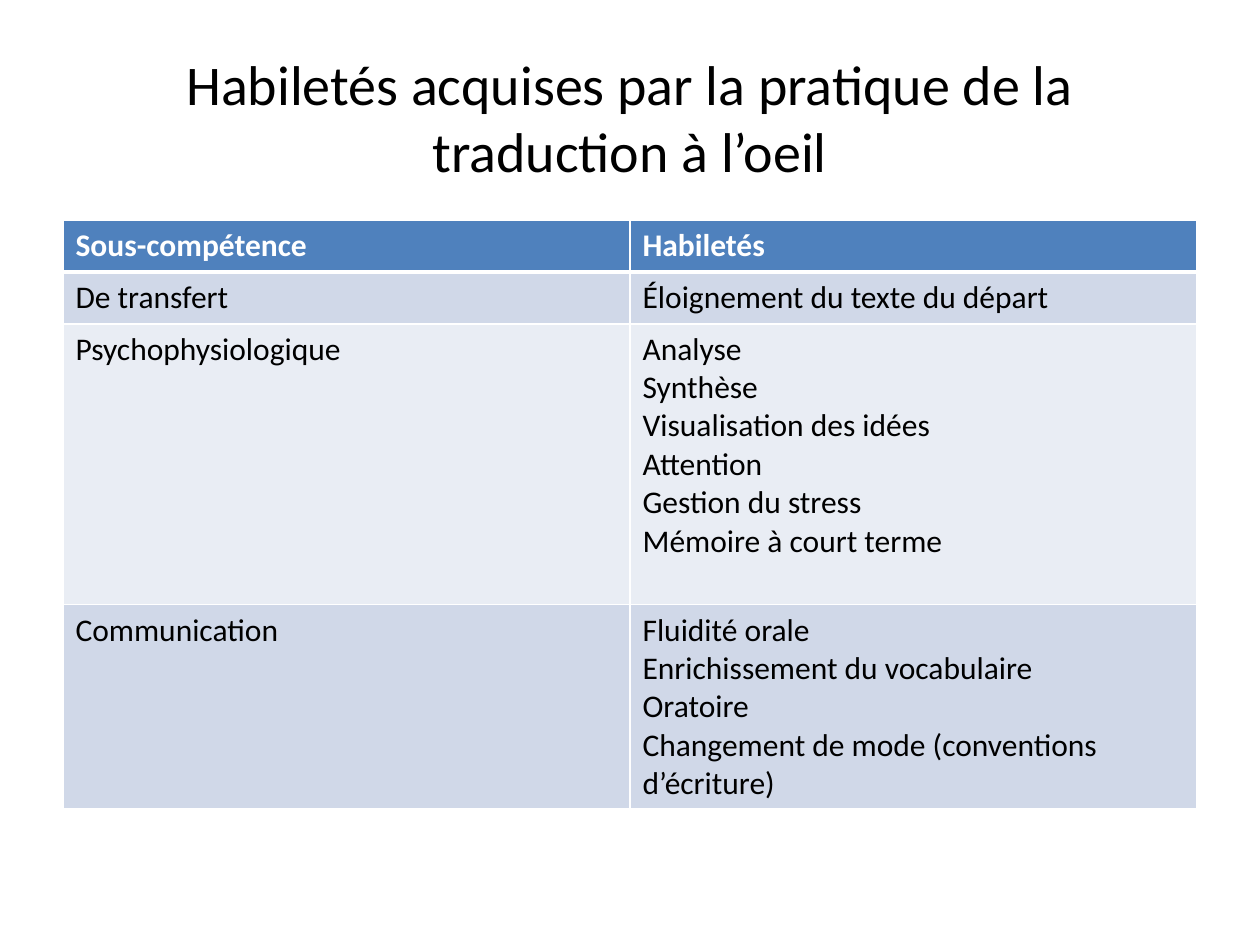
from lxml import etree
from pptx import Presentation
from pptx import util as u
from pptx.dml.color import RGBColor
from pptx.enum import text
from pptx.oxml import ns

FONT = "Calibri"
COLORS = {
    "text": "000000",
    "white": "FFFFFF",
    "header": "4F81BD",
    "band_dark": "D0D8E8",
    "band_light": "E9EDF4",
}
TITLE = "Habiletés acquises par la pratique de la traduction à l’oeil"
ROWS = [
    ("Sous-compétence", ["Habiletés"]),
    ("De transfert", ["Éloignement du texte du départ"]),
    ("Psychophysiologique", ["Analyse", "Synthèse", "Visualisation des idées",
                             "Attention", "Gestion du stress", "Mémoire à court terme"]),
    ("Communication", ["Fluidité orale", "Enrichissement du vocabulaire", "Oratoire",
                       "Changement de mode (conventions d’écriture)"]),
]
ROW_HEIGHTS = [0.41, 0.41, 2.23, 1.62]


def format_text(text_frame, size, color, bold=False):
    for paragraph in text_frame.paragraphs:
        for run in paragraph.runs:
            run.font.name = FONT
            run.font.size = u.Pt(size)
            run.font.bold = bold
            run.font.color.rgb = RGBColor.from_string(COLORS[color])


def add_title(slide):
    box = slide.shapes.add_textbox(u.Inches(0.5), u.Inches(0.3), u.Inches(9), u.Inches(1.25))
    text_frame = box.text_frame
    text_frame.word_wrap = True
    text_frame.vertical_anchor = text.MSO_ANCHOR.MIDDLE
    text_frame.text = TITLE
    text_frame.paragraphs[0].alignment = text.PP_ALIGN.CENTER
    format_text(text_frame, 32, "text")


def set_borders(cell, widths):
    properties = cell._tc.get_or_add_tcPr()
    for side, width in widths.items():
        line = etree.SubElement(properties, ns.qn(f"a:ln{side}"), w=str(u.Pt(width)))
        fill = etree.SubElement(line, ns.qn("a:solidFill"))
        etree.SubElement(fill, ns.qn("a:srgbClr"), val=COLORS["white"])


def fill_cell(cell, content, row_index):
    is_header = row_index == 0
    # Borders precede the fill in the cell properties
    set_borders(cell, {"L": 1, "R": 1, "T": 3 if row_index == 1 else 1,
                       "B": 3 if is_header else 1})
    band = "band_dark" if row_index % 2 else "band_light"
    cell.fill.solid()
    cell.fill.fore_color.rgb = RGBColor.from_string(COLORS["header" if is_header else band])
    cell.text_frame.text = content
    format_text(cell.text_frame, 18, "white" if is_header else "text", is_header)


def add_skills_table(slide):
    frame = slide.shapes.add_table(len(ROWS), 2, u.Inches(0.5), u.Inches(1.75),
                                   u.Inches(9), u.Inches(sum(ROW_HEIGHTS)))
    table = frame.table
    for row_index, (competence, skills) in enumerate(ROWS):
        table.rows[row_index].height = u.Inches(ROW_HEIGHTS[row_index])
        fill_cell(table.cell(row_index, 0), competence, row_index)
        fill_cell(table.cell(row_index, 1), "\n".join(skills), row_index)


def main():
    presentation = Presentation()
    presentation.slide_width = u.Inches(10)
    presentation.slide_height = u.Inches(7.5)
    slide = presentation.slides.add_slide(presentation.slide_layouts[6])
    add_title(slide)
    add_skills_table(slide)
    presentation.save("out.pptx")


if __name__ == "__main__":
    main()
